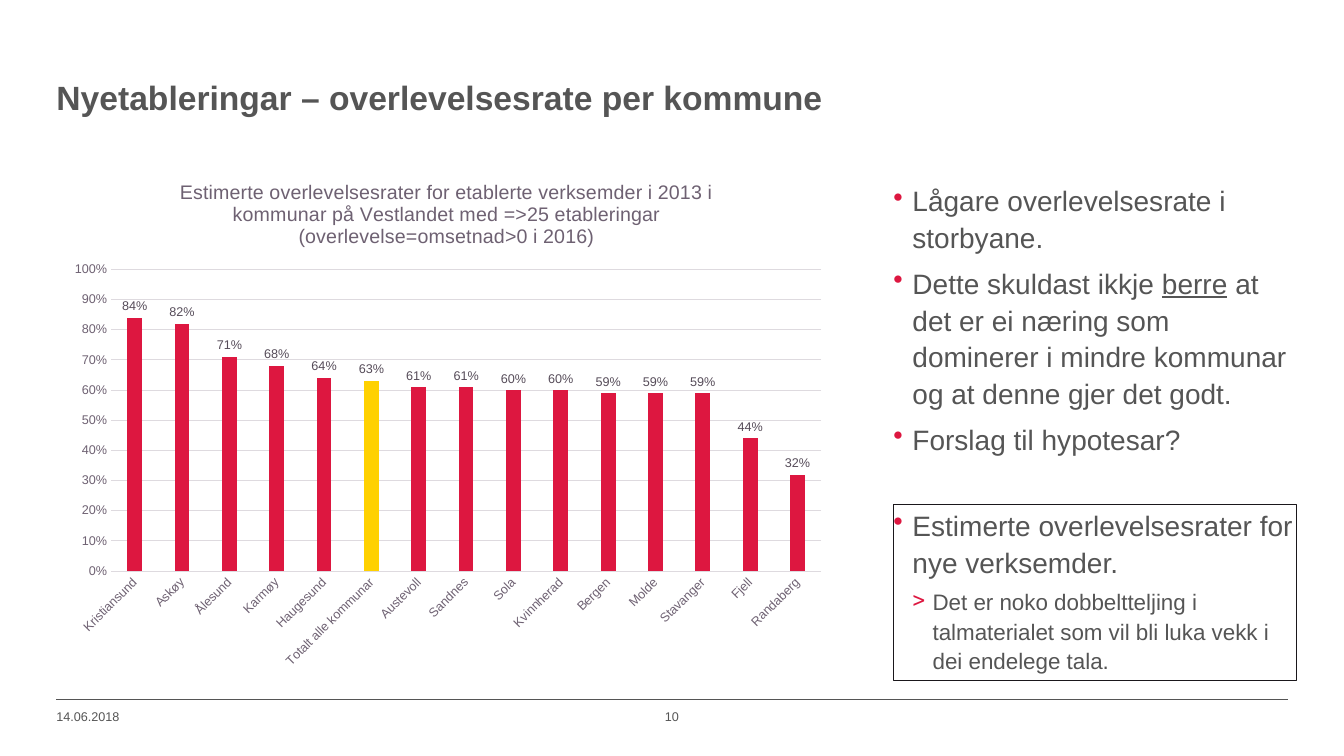
from lxml import etree
from pptx import Presentation
from pptx.chart.data import CategoryChartData
from pptx.dml.color import RGBColor
from pptx.enum.chart import XL_CHART_TYPE as ChartType, XL_LABEL_POSITION as LabelPosition
from pptx.enum.chart import XL_TICK_MARK as TickMark
from pptx.enum.shapes import MSO_CONNECTOR as Connector
from pptx.enum.text import PP_ALIGN as Align
from pptx.oxml import parse_xml
from pptx.oxml.ns import nsdecls, qn
from pptx.util import Inches, Pt

FONT = "Arial"
WHITE = RGBColor(0xFF, 0xFF, 0xFF)
GREY = RGBColor(0x55, 0x55, 0x55)
BLACK = RGBColor(0x1A, 0x17, 0x1B)
RED = RGBColor(0xDD, 0x17, 0x40)
YELLOW = RGBColor(0xFF, 0xD1, 0x00)
AXIS_TEXT = RGBColor(0x6E, 0x61, 0x72)
LABEL_TEXT = RGBColor(0x56, 0x4C, 0x59)
GRID = RGBColor(0xDE, 0xDA, 0xDF)

LEFT, RIGHT = 0.56, 12.77
SIDE_LEFT, SIDE_WIDTH = 8.86, 4
TOTAL = "Totalt alle kommunar"
CHART_TITLE = ("Estimerte overlevelsesrater for etablerte verksemder i 2013 i kommunar "
               "på Vestlandet med =>25 etableringar (overlevelse=omsetnad>0 i 2016)")
SURVIVAL = {
    "Kristiansund": 0.84, "Askøy": 0.82, "Ålesund": 0.71, "Karmøy": 0.68,
    "Haugesund": 0.64, TOTAL: 0.63, "Austevoll": 0.61, "Sandnes": 0.61,
    "Sola": 0.6, "Kvinnherad": 0.6, "Bergen": 0.59, "Molde": 0.59,
    "Stavanger": 0.59, "Fjell": 0.44, "Randaberg": 0.32,
}
REASONS = [
    (0, ["Lågare overlevelsesrate i storbyane."]),
    (0, ["Dette skuldast ikkje ", "berre",
         " at det er ei næring som dominerer i mindre kommunar og at denne gjer det godt."]),
    (0, ["Forslag til hypotesar?"]),
]
CAVEATS = [
    (0, ["Estimerte overlevelsesrater for nye verksemder."]),
    (1, ["Det er noko dobbeltteljing i talmaterialet som vil bli luka vekk i dei endelege tala."]),
]
LEVELS = [("•", 0.19, -0.19, 20, 6), (">", 0.39, -0.2, 16, 5)]


def style_font(font, size, color, bold=False):
    """Set typeface, size, colour and weight of a font."""
    font.name, font.size, font.bold = FONT, Pt(size), bold
    font.color.rgb = color


def add_frame(slide, box):
    """Add a wrapping text box without margins."""
    shape = slide.shapes.add_textbox(*map(Inches, box))
    frame = shape.text_frame
    frame.word_wrap = True
    frame.margin_left = frame.margin_right = frame.margin_top = frame.margin_bottom = 0
    return shape


def add_label(slide, box, text, size, bold=False, align=Align.LEFT):
    """Add a single line of grey text."""
    paragraph = add_frame(slide, box).text_frame.paragraphs[0]
    paragraph.text, paragraph.alignment = text, align
    style_font(paragraph.font, size, GREY, bold)


def add_bullets(slide, box, items):
    """Add a bulleted list, underlining every second run."""
    shape = add_frame(slide, box)
    frame = shape.text_frame
    for index, (level, texts) in enumerate(items):
        mark, margin, indent, size, before = LEVELS[level]
        paragraph = frame.add_paragraph() if index else frame.paragraphs[0]
        properties = paragraph._p.get_or_add_pPr()
        properties.set("marL", str(Inches(margin)))
        properties.set("indent", str(Inches(indent)))
        color = etree.SubElement(properties, qn("a:buClr"))
        etree.SubElement(color, qn("a:srgbClr"), val=str(RED))
        etree.SubElement(properties, qn("a:buChar"), char=mark)
        paragraph.level = level
        paragraph.line_spacing = 1.1
        if index:
            paragraph.space_before = Pt(before)
        style_font(paragraph.font, size, GREY)
        for position, text in enumerate(texts):
            run = paragraph.add_run()
            run.text = text
            if position % 2:
                run.font.underline = True
    return shape


def style_axis(axis):
    """Give an axis its font and remove its tick marks."""
    axis.major_tick_mark = axis.minor_tick_mark = TickMark.NONE
    style_font(axis.tick_labels.font, 9, AXIS_TEXT)


def place_plot(chart, x, y, width, height):
    """Fix the inner plot area as shares of the chart."""
    plot_area = chart._chartSpace.chart.plotArea
    for layout in plot_area.findall(qn("c:layout")):
        plot_area.remove(layout)
    plot_area.insert(0, parse_xml(
        f'<c:layout {nsdecls("c")}><c:manualLayout><c:layoutTarget val="inner"/>'
        f'<c:xMode val="edge"/><c:yMode val="edge"/><c:x val="{x}"/><c:y val="{y}"/>'
        f'<c:w val="{width}"/><c:h val="{height}"/></c:manualLayout></c:layout>'))


def add_survival_chart(slide, box):
    """Add the column chart of survival rates with the total highlighted."""
    data = CategoryChartData(number_format="0%")
    data.categories = list(SURVIVAL)
    data.add_series("Overlevelsesrate", SURVIVAL.values())
    chart = slide.shapes.add_chart(ChartType.COLUMN_CLUSTERED, *map(Inches, box), data).chart
    style_font(chart.font, 10, BLACK)
    chart.has_legend = False
    title = chart.chart_title.text_frame
    title.text = CHART_TITLE
    style_font(title.paragraphs[0].font, 14, AXIS_TEXT)
    place_plot(chart, 0.07, 0.21, 0.91, 0.58)

    style_axis(chart.category_axis)
    chart.category_axis.format.line.color.rgb = GRID
    chart.category_axis.format.line.width = Pt(0.75)
    chart.category_axis._element.find(qn("c:txPr")).find(qn("a:bodyPr")).set("rot", "-2700000")
    values = chart.value_axis
    style_axis(values)
    values.minimum_scale, values.maximum_scale, values.major_unit = 0, 1, 0.1
    values.tick_labels.number_format = "0%"
    values.tick_labels.number_format_is_linked = False
    values.format.line.fill.background()
    values.major_gridlines.format.line.color.rgb = GRID
    values.major_gridlines.format.line.width = Pt(0.75)

    plot = chart.plots[0]
    plot.gap_width, plot.overlap, plot.vary_by_categories = 219, -27, False
    series = plot.series[0]
    series.format.fill.solid()
    series.format.fill.fore_color.rgb = RED
    total = series.points[list(SURVIVAL).index(TOTAL)].format.fill
    total.solid()
    total.fore_color.rgb = YELLOW
    labels = series.data_labels
    labels.show_value = True
    labels.number_format, labels.number_format_is_linked = "0%", False
    labels.position = LabelPosition.OUTSIDE_END
    style_font(labels.font, 9, LABEL_TEXT)


def add_footer(slide, top):
    """Add the rule, the date and the page number."""
    rule = slide.shapes.add_connector(
        Connector.STRAIGHT, Inches(LEFT), Inches(top), Inches(RIGHT), Inches(top))
    rule.line.color.rgb, rule.line.width = GREY, Pt(0.25)
    etree.SubElement(rule._element.spPr, qn("a:effectLst"))
    add_label(slide, (LEFT, top + 0.09, 1.35, 0.22), "14.06.2018", 9)
    add_label(slide, (6.35, top + 0.09, 0.63, 0.22), "10", 9, align=Align.CENTER)


def main():
    """Build the slide and save it."""
    presentation = Presentation()
    presentation.slide_width, presentation.slide_height = Inches(13.33), Inches(7.5)
    slide = presentation.slides.add_slide(presentation.slide_layouts[6])
    slide.background.fill.solid()
    slide.background.fill.fore_color.rgb = WHITE
    add_footer(slide, 6.94)
    add_label(slide, (LEFT, 0.76, RIGHT - LEFT, 0.83),
              "Nyetableringar – overlevelsesrate per kommune", 24, bold=True)
    caveats = add_bullets(slide, (SIDE_LEFT, 5.01, SIDE_WIDTH, 1.74), CAVEATS)
    caveats.line.color.rgb, caveats.line.width = BLACK, Pt(0.75)
    add_bullets(slide, (SIDE_LEFT, 1.79, SIDE_WIDTH, 3.3), REASONS)
    add_survival_chart(slide, (LEFT, 1.59, 7.74, 5.16))
    presentation.save("out.pptx")


if __name__ == "__main__":
    main()
